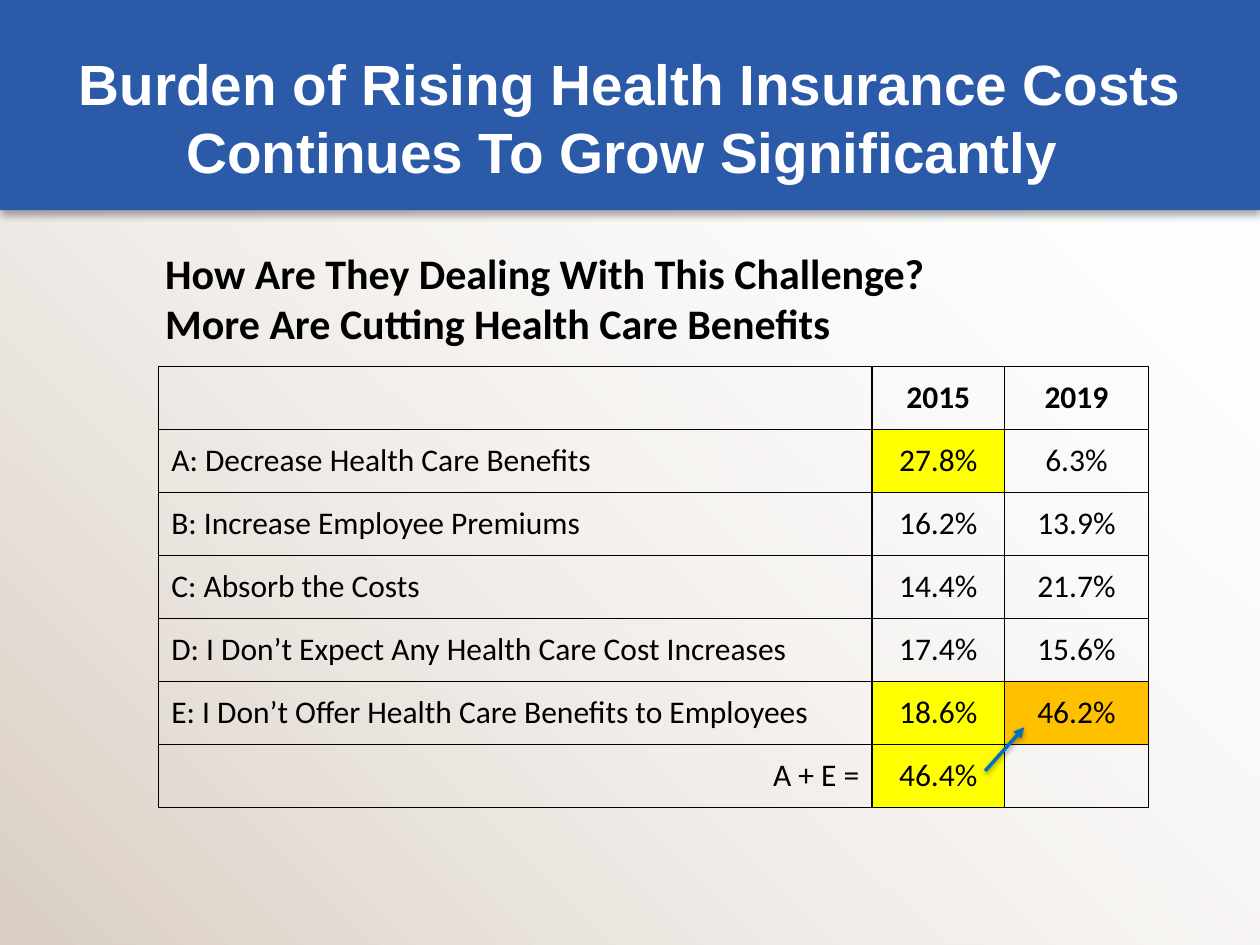
from dataclasses import dataclass

from lxml import etree
from pptx import Presentation
from pptx import util as u
from pptx.dml.color import RGBColor
from pptx.enum import shapes, text
from pptx.oxml import ns

COLORS = {
    "white": "FFFFFF", "black": "000000", "sand": "DACFC4", "band": "2B5AA9",
    "yellow": "FFFF00", "amber": "FFC000", "arrow": "0070C0",
}
SLIDE_WIDTH, SLIDE_HEIGHT = u.Cm(25.4), u.Cm(19.05)
ROW_HEIGHT = u.Cm(1.27)
COLUMN_WIDTHS = (u.Cm(14.38), u.Cm(2.67), u.Cm(2.9))


@dataclass
class Answer:
    label: str
    values: tuple[str, str]
    fills: tuple[str, str] = ("", "")
    bold: bool = False
    label_align: text.PP_ALIGN = text.PP_ALIGN.LEFT


@dataclass
class Shadow:
    alpha: int
    blur: float
    distance: float


ANSWERS = [
    Answer("", ("2015", "2019"), bold=True),
    Answer("A: Decrease Health Care Benefits", ("27.8%", "6.3%"), ("yellow", "")),
    Answer("B: Increase Employee Premiums", ("16.2%", "13.9%")),
    Answer("C: Absorb the Costs", ("14.4%", "21.7%")),
    Answer("D: I Don’t Expect Any Health Care Cost Increases", ("17.4%", "15.6%")),
    Answer("E: I Don’t Offer Health Care Benefits to Employees",
           ("18.6%", "46.2%"), ("yellow", "amber")),
    Answer("A + E =", ("46.4%", ""), ("yellow", ""),
           label_align=text.PP_ALIGN.RIGHT),
]


def color(name: str) -> RGBColor:
    return RGBColor.from_string(COLORS[name])


def add_child(parent, tag: str, **attributes):
    child = etree.SubElement(parent, ns.qn(tag))
    for key, value in attributes.items():
        child.set(key, str(value))
    return child


def add_shadow(shape, shadow: Shadow) -> None:
    """Cast a black shadow straight down."""
    properties = shape._element.spPr
    for old in properties.findall(ns.qn("a:effectLst")):
        properties.remove(old)
    effects = add_child(properties, "a:effectLst")
    outer = add_child(effects, "a:outerShdw", blurRad=u.Pt(shadow.blur),
                      dist=u.Pt(shadow.distance), dir=90 * 60000, rotWithShape=0)
    black = add_child(outer, "a:srgbClr", val=COLORS["black"])
    add_child(black, "a:alpha", val=shadow.alpha * 1000)


def add_rectangle(slide, height: int):
    """Add a full-width rectangle at the top of the slide."""
    shape = slide.shapes.add_shape(
        shapes.MSO_SHAPE.RECTANGLE, 0, 0, SLIDE_WIDTH, height)
    shape.shadow.inherit = False
    shape.line.fill.background()
    return shape


def format_paragraph(paragraph, font_name: str, size: float, font_color: str,
                     bold: bool, align: text.PP_ALIGN) -> None:
    paragraph.alignment = align
    for run in paragraph.runs:
        run.font.name = font_name
        run.font.size = u.Pt(size)
        run.font.bold = bold
        run.font.color.rgb = color(font_color)


def add_heading(slide, box: tuple, content: str, font_name: str, size: float,
                font_color: str, align: text.PP_ALIGN,
                anchor: text.MSO_ANCHOR) -> None:
    frame = slide.shapes.add_textbox(*(u.Cm(length) for length in box)).text_frame
    frame.word_wrap = True
    frame.vertical_anchor = anchor
    frame.margin_left = frame.margin_right = u.Cm(0.13)
    frame.margin_top = frame.margin_bottom = u.Cm(0.13)
    frame.text = content
    for paragraph in frame.paragraphs:
        format_paragraph(paragraph, font_name, size, font_color, True, align)


def fill_cell(cell, content: str, fill: str, bold: bool,
              align: text.PP_ALIGN) -> None:
    cell.vertical_anchor = text.MSO_ANCHOR.MIDDLE
    cell.text_frame.text = content
    format_paragraph(cell.text_frame.paragraphs[0], "Calibri", 18, "black",
                     bold, align)
    # Borders come before the fill in the cell properties
    properties = cell._tc.get_or_add_tcPr()
    for side in "LRTB":
        border = add_child(properties, f"a:ln{side}", w=u.Pt(1))
        solid = add_child(border, "a:solidFill")
        add_child(solid, "a:srgbClr", val=COLORS["black"])
    if fill:
        cell.fill.solid()
        cell.fill.fore_color.rgb = color(fill)
    else:
        cell.fill.background()


def add_answer_table(slide, answers: list[Answer]) -> None:
    table = slide.shapes.add_table(
        len(answers), len(COLUMN_WIDTHS), u.Cm(3.2), u.Cm(7.39),
        sum(COLUMN_WIDTHS), ROW_HEIGHT * len(answers)).table
    table.first_row = table.horz_banding = False
    for column, width in zip(table.columns, COLUMN_WIDTHS):
        column.width = width
    for row, answer in zip(table.rows, answers):
        row.height = ROW_HEIGHT
        label, *value_cells = row.cells
        fill_cell(label, answer.label, "", answer.bold, answer.label_align)
        for cell, value, fill in zip(value_cells, answer.values, answer.fills):
            fill_cell(cell, value, fill, answer.bold, text.PP_ALIGN.CENTER)


def add_arrow(slide, start: tuple, end: tuple) -> None:
    arrow = slide.shapes.add_connector(
        shapes.MSO_CONNECTOR.STRAIGHT,
        *(u.Cm(length) for length in start + end))
    arrow.line.color.rgb = color("arrow")
    arrow.line.width = u.Pt(2)
    add_child(arrow.line._get_or_add_ln(), "a:tailEnd", type="triangle")
    add_shadow(arrow, Shadow(38, 3, 1.6))


def main() -> None:
    presentation = Presentation()
    presentation.slide_width, presentation.slide_height = SLIDE_WIDTH, SLIDE_HEIGHT
    slide = presentation.slides.add_slide(presentation.slide_layouts[6])

    # Background fading from sand to clear white
    backdrop = add_rectangle(slide, SLIDE_HEIGHT)
    backdrop.fill.gradient()
    backdrop.fill.gradient_angle = 45
    for stop, name in zip(backdrop.fill.gradient_stops, ("sand", "white")):
        stop.color.rgb = color(name)
    *_, clear_white = backdrop._element.spPr.iter(ns.qn("a:srgbClr"))
    add_child(clear_white, "a:alpha", val=0)

    # Title band
    band = add_rectangle(slide, u.Cm(4.24))
    band.fill.solid()
    band.fill.fore_color.rgb = color("band")
    add_shadow(band, Shadow(32, 4, 2.2))
    add_heading(
        slide, (1.27, 0.76, 22.86, 3.18),
        "Burden of Rising Health Insurance Costs Continues To Grow Significantly ",
        "Arial", 32.4, "white", text.PP_ALIGN.CENTER, text.MSO_ANCHOR.MIDDLE)

    # Survey results, with an arrow from the sum to the later share
    add_answer_table(slide, ANSWERS)
    add_arrow(slide, (19.86, 15.54), (20.65, 14.66))

    # Question above the table
    add_heading(
        slide, (3.2, 4.85, 17.6, 2.31),
        "How Are They Dealing With This Challenge?\n"
        "More Are Cutting Health Care Benefits",
        "Calibri", 24, "black", text.PP_ALIGN.LEFT, text.MSO_ANCHOR.TOP)

    presentation.save("out.pptx")


if __name__ == "__main__":
    main()
